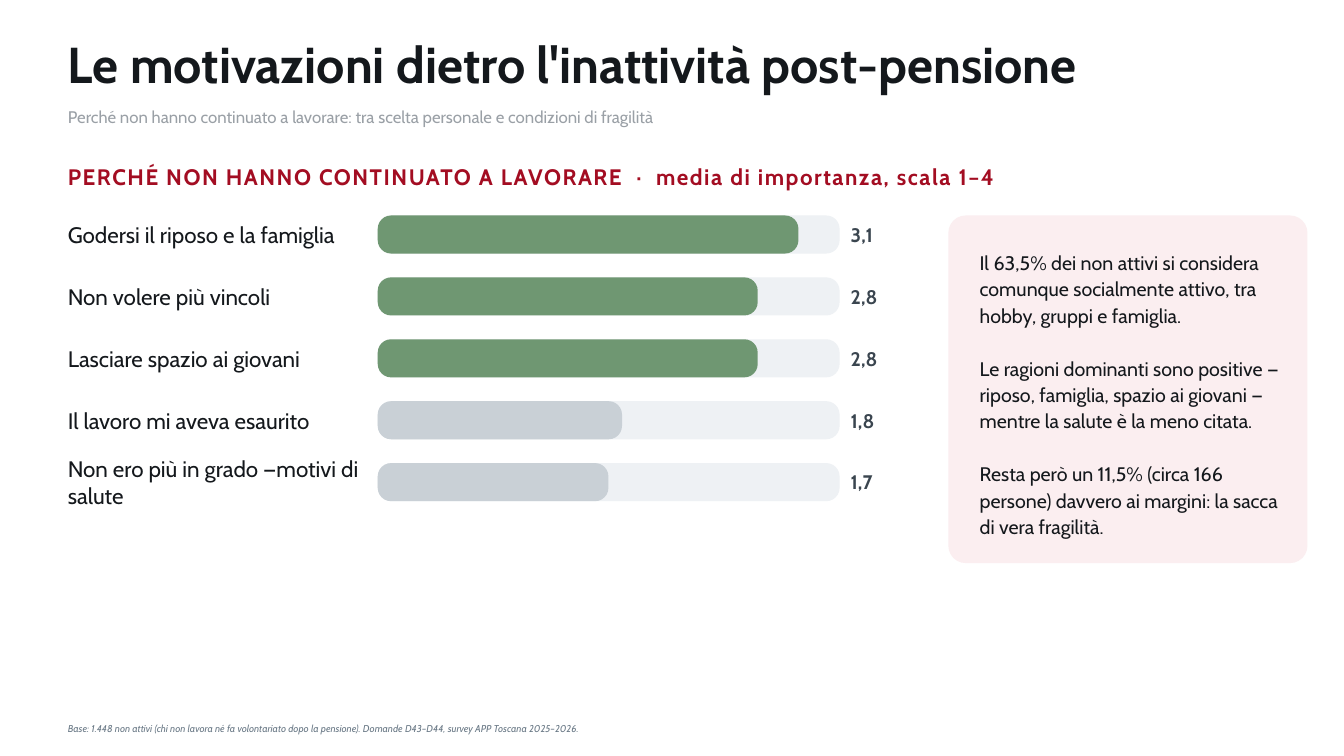
from pptx import Presentation
from pptx.dml.color import RGBColor
from pptx.enum import shapes, text
from pptx.util import Cm, Pt

FONT = "Cabin"
COLORS = {
    "ink": "14181C",
    "subtitle": "9AA0A6",
    "heading": "A30D22",
    "value": "3A454F",
    "source": "6B7A87",
    "track": "EEF1F4",
    "choice": "6F9772",
    "fragility": "C9D0D6",
    "panel": "FBEEF0",
}
REASONS = [
    ("Godersi il riposo e la famiglia", 3.1, "choice"),
    ("Non volere più vincoli", 2.8, "choice"),
    ("Lasciare spazio ai giovani", 2.8, "choice"),
    ("Il lavoro mi aveva esaurito", 1.8, "fragility"),
    ("Non ero più in grado —motivi di salute", 1.7, "fragility"),
]
FINDINGS = [
    "Il 63,5% dei non attivi si considera comunque socialmente attivo, "
    "tra hobby, gruppi e famiglia.",
    "Le ragioni dominanti sono positive — riposo, famiglia, spazio ai giovani — "
    "mentre la salute è la meno citata.",
    "Resta però un 11,5% (circa 166 persone) davvero ai margini: "
    "la sacca di vera fragilità.",
]
MARGIN = 1.71
CHART_TOP = 5.43
ROW_PITCH = 1.56
BAR_LEFT = 9.52
BAR_HEIGHT = 0.96
TRACK_WIDTH = 11.64
CM_PER_POINT = 3.42


def add_text(slide, box, lines, size, color, bold=False, italic=False,
             anchor=text.MSO_ANCHOR.MIDDLE, line_spacing=None, gap=0, tracking=None):
    frame = slide.shapes.add_textbox(*map(Cm, box)).text_frame
    frame.word_wrap = True
    frame.vertical_anchor = anchor
    frame.margin_left = frame.margin_right = frame.margin_top = frame.margin_bottom = 0
    for index, line in enumerate(lines):
        paragraph = frame.paragraphs[0] if index == 0 else frame.add_paragraph()
        run = paragraph.add_run()
        run.text = line
        if tracking:
            run._r.get_or_add_rPr().set("spc", str(tracking))
        if line_spacing:
            paragraph.line_spacing = line_spacing
        if index and gap:
            paragraph.space_before = Pt(gap)
        font = paragraph.font
        font.name = FONT
        font.size = Pt(size)
        font.bold = bold
        font.italic = italic
        font.color.rgb = RGBColor.from_string(COLORS[color])


def add_rounded(slide, box, color, rounding):
    shape = slide.shapes.add_shape(shapes.MSO_SHAPE.ROUNDED_RECTANGLE, *map(Cm, box))
    shape.adjustments[0] = rounding
    shape.shadow.inherit = False
    shape.fill.solid()
    shape.fill.fore_color.rgb = RGBColor.from_string(COLORS[color])
    shape.line.fill.background()


def add_reason(slide, row, label, score, color):
    top = CHART_TOP + row * ROW_PITCH
    add_text(slide, (MARGIN, top, 7.62, BAR_HEIGHT), [label], 16, "ink")
    for width, fill in ((TRACK_WIDTH, "track"), (score * CM_PER_POINT, color)):
        add_rounded(slide, (BAR_LEFT, top, width, BAR_HEIGHT), fill, 0.35)
    score_label = f"{score:.1f}".replace(".", ",")
    add_text(slide, (21.44, top, 1.9, BAR_HEIGHT), [score_label], 14, "value", bold=True)


def add_findings(slide):
    add_rounded(slide, (23.9, CHART_TOP, 9.05, 8.76), "panel", 0.05)
    add_text(slide, (24.69, 6.25, 8, 6.48), FINDINGS, 14, "ink",
             anchor=text.MSO_ANCHOR.TOP, line_spacing=1.12, gap=19)


def main():
    prs = Presentation()
    prs.slide_width = Cm(33.87)
    prs.slide_height = Cm(19.05)
    slide = prs.slides.add_slide(prs.slide_layouts[6])

    add_text(slide, (MARGIN, 0.91, 30.48, 1.37),
             ["Le motivazioni dietro l'inattività post-pensione"], 36, "ink", bold=True)
    add_text(slide, (MARGIN, 2.49, 30.48, 0.86),
             ["Perché non hanno continuato a lavorare: "
              "tra scelta personale e condizioni di fragilità"],
             12, "subtitle", line_spacing=1.05)
    add_text(slide, (MARGIN, 3.89, 24.1, 1.14),
             ["PERCHÉ NON HANNO CONTINUATO A LAVORARE  ·  "
              "media di importanza, scala 1–4"],
             16, "heading", bold=True, tracking=110)
    for row, reason in enumerate(REASONS):
        add_reason(slide, row, *reason)
    add_findings(slide)
    add_text(slide, (MARGIN, 17.91, 30.48, 0.86),
             ["Base: 1.448 non attivi (chi non lavora né fa volontariato dopo la pensione). "
              "Domande D43–D44, survey APP Toscana 2025–2026."],
             7.1, "source", italic=True, line_spacing=Pt(9))

    prs.save("out.pptx")


if __name__ == "__main__":
    main()
